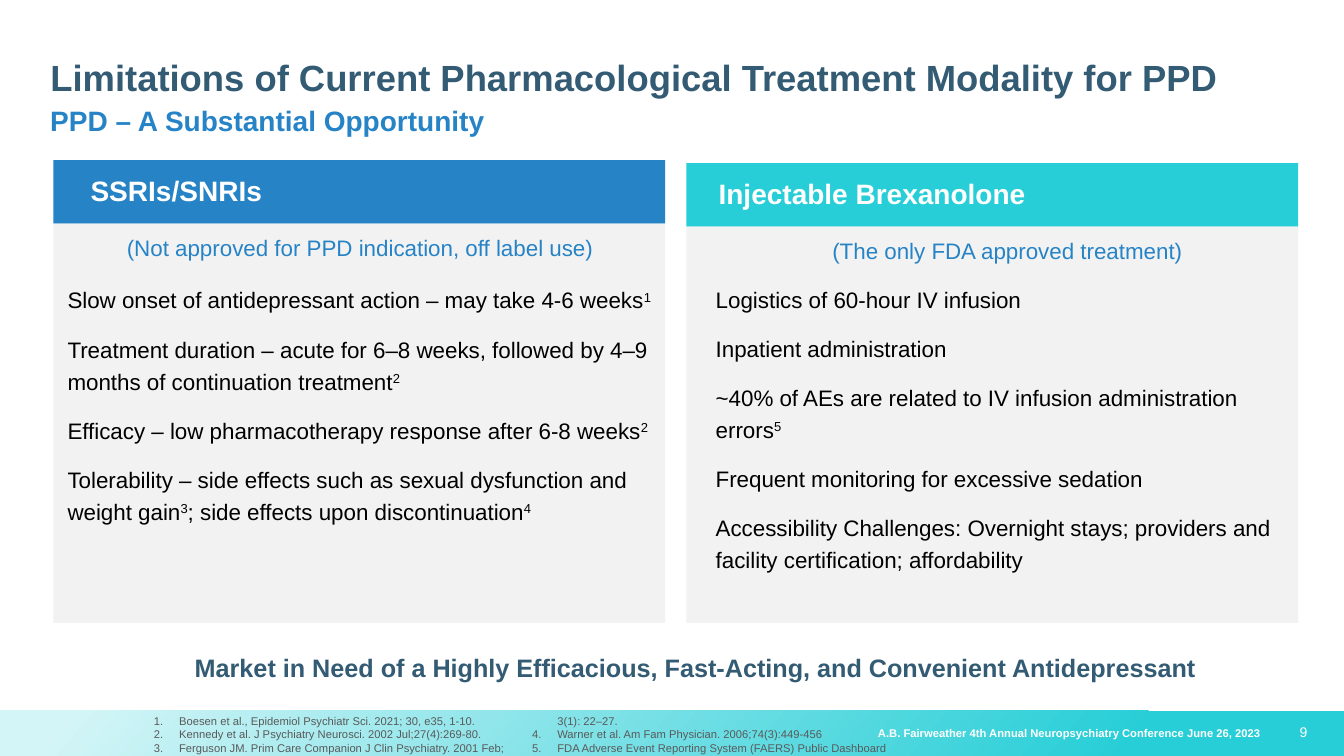
from lxml import etree
from pptx import Presentation
from pptx.dml.color import RGBColor
from pptx.enum.shapes import MSO_SHAPE
from pptx.enum.text import MSO_ANCHOR, MSO_AUTO_SIZE, PP_ALIGN
from pptx.oxml.ns import qn
from pptx.util import Pt

NAVY = RGBColor(0x33, 0x5B, 0x74)
BLUE = RGBColor(0x26, 0x83, 0xC6)
TEAL = RGBColor(0x27, 0xCE, 0xD7)
PALE_TEAL = RGBColor(0xD4, 0xF5, 0xF7)
PANEL_GRAY = RGBColor(0xF2, 0xF2, 0xF2)
TEXT_GRAY = RGBColor(0x59, 0x59, 0x59)
BLACK = RGBColor(0, 0, 0)
WHITE = RGBColor(0xFF, 0xFF, 0xFF)
RECTANGLE = MSO_SHAPE.RECTANGLE
LEFT, CENTER, RIGHT = PP_ALIGN.LEFT, PP_ALIGN.CENTER, PP_ALIGN.RIGHT
TOP, MIDDLE = MSO_ANCHOR.TOP, MSO_ANCHOR.MIDDLE
NO_AUTOFIT = MSO_AUTO_SIZE.NONE

FORMATS = {
    "title": {"size": Pt(26), "bold": True},
    "heading": {"size": Pt(20), "bold": True},
    "message": {"size": Pt(18), "bold": True},
    "body": {"size": Pt(16), "bold": False},
    "number": {"size": Pt(10), "bold": False},
    "event": {"size": Pt(8), "bold": True},
    "reference": {"size": Pt(8), "bold": False},
}

deck = Presentation()
deck.slide_width, deck.slide_height = Pt(960), Pt(540)
page = deck.slides.add_slide(deck.slide_layouts[3])
shapes = page.shapes
title, *lists = page.placeholders


def add_rectangle(left, top, width, height, color=None):
    box = shapes.add_shape(RECTANGLE, Pt(left), Pt(top), Pt(width), Pt(height))
    box.shadow.inherit = False
    box.line.fill.background()
    if color is not None:
        box.fill.solid()
        box.fill.fore_color.rgb = color
    return box


def write(place, lines, style, color, align=LEFT, anchor=TOP, box=None,
          bullet=None, indent=(0, 0), spacing=None, gap=0):
    if box is None:
        box = shapes.add_textbox(*map(Pt, place))
    else:
        box.left, box.top, box.width, box.height = map(Pt, place)
        shapes.element.append(box.element)
    frame = box.text_frame
    frame.word_wrap = True
    frame.auto_size = NO_AUTOFIT
    frame.vertical_anchor = anchor
    for index, line in enumerate(lines):
        para = frame.add_paragraph() if index else frame.paragraphs[0]
        properties = para._p.get_or_add_pPr()
        if bullet:
            properties.set("marL", str(Pt(indent[0])))
            properties.set("indent", str(Pt(indent[1])))
            mark = etree.SubElement(properties, qn("a:" + bullet))
            if bullet == "buAutoNum":
                mark.set("type", "arabicPeriod")
        para.alignment = align
        para.space_before = Pt(gap if index else 0)
        para.space_after = Pt(gap)
        if spacing:
            para.line_spacing = spacing
        for part, text in enumerate(line.split("^")):
            if not text:
                continue
            span = para.add_run()
            span.text = text
            span.font.name = "Arial"
            span.font.color.rgb = color
            for name, value in FORMATS[style].items():
                setattr(span.font, name, value)
            if part % 2:
                span._r.get_or_add_rPr().set("baseline", "30000")
    return box


footer = add_rectangle(0, 507.6, 960, 32.4)
footer.rotation = 180
footer.fill.gradient()
footer.fill.gradient_angle = 320
for stop, (position, color) in zip(footer.fill.gradient_stops, [(0.16, TEAL), (0.95, PALE_TEAL)]):
    stop.position = position
    stop.color.rgb = color

write((903.6, 513.4, 37.4, 19.4), ["9"], "number", WHITE, RIGHT)
event = write((627.1, 519.1, 325, 9.4),
              ["A.B. Fairweather 4th Annual Neuropsychiatry Conference June 26, 2023"],
              "event", WHITE, anchor=MIDDLE)
for side in ("left", "top", "right", "bottom"):
    setattr(event.text_frame, "margin_" + side, 0)
write((94.3, 462.2, 805, 28.8),
      ["Market in Need of a Highly Efficacious, Fast-Acting, and Convenient Antidepressant"],
      "message", NAVY, CENTER)

PANEL_WIDTH, HEADER_HEIGHT, PANEL_BOTTOM = 437, 45.3, 445
panels = [
    {"left": 38.2, "top": 114.5, "color": BLUE,
     "heading": "SSRIs/SNRIs", "heading_left": 57.6,
     "note": "(Not approved for PPD indication, off label use)", "note_left": 83.5,
     "note_align": LEFT, "list_place": (40.3, 197.3, 437, 180.7),
     "points": [
         "Slow onset of antidepressant action – may take 4-6 weeks^1",
         "Treatment duration – acute for 6–8 weeks, followed by 4–9 months of continuation treatment^2",
         "Efficacy – low pharmacotherapy response after 6-8 weeks^2",
         "Tolerability – side effects such as sexual dysfunction and weight gain^3^; "
         "side effects upon discontinuation^4"]},
    {"left": 490.3, "top": 116.6, "color": TEAL,
     "heading": "Injectable Brexanolone", "heading_left": 506.2,
     "note": "(The only FDA approved treatment)", "note_left": 501.1,
     "note_align": CENTER, "list_place": (503.3, 196.6, 419, 216.7),
     "points": [
         "Logistics of 60-hour IV infusion",
         "Inpatient administration",
         "~40% of AEs are related to IV infusion administration errors^5",
         "Frequent monitoring for excessive sedation",
         "Accessibility Challenges: Overnight stays; providers and facility certification; "
         "affordability"]},
]
for panel, list_box in zip(panels, lists):
    left, top = panel["left"], panel["top"]
    body_top = top + HEADER_HEIGHT
    add_rectangle(left, top, PANEL_WIDTH, HEADER_HEIGHT, panel["color"])
    add_rectangle(left, body_top, PANEL_WIDTH, PANEL_BOTTOM - body_top, PANEL_GRAY)
    write((panel["heading_left"], top + 5.7, 387, 31.7), [panel["heading"]], "heading", WHITE)
    write((panel["note_left"], top + 49.4, PANEL_WIDTH, 26.6), [panel["note"]],
          "body", BLUE, panel["note_align"])
    write(panel["list_place"], panel["points"], "body", BLACK, box=list_box,
          bullet="buNone", indent=(0.7, 0), spacing=1.2, gap=6)

references = write((102.2, 512.6, 554.4, 23.8), [
    "Boesen et al., Epidemiol Psychiatr Sci. 2021; 30, e35, 1-10.",
    "Kennedy et al. J Psychiatry Neurosci. 2002 Jul;27(4):269-80.",
    "Ferguson JM. Prim Care Companion J Clin Psychiatry. 2001 Feb; 3(1): 22–27.",
    "Warner et al. Am Fam Physician. 2006;74(3):449-456",
    "FDA Adverse Event Reporting System (FAERS) Public Dashboard",
], "reference", TEXT_GRAY, anchor=MIDDLE, bullet="buAutoNum", indent=(18.7, -18))
references.element.find(".//" + qn("a:bodyPr")).set("numCol", "2")

write((28.8, 36, 899.3, 33.1),
      ["Limitations of Current Pharmacological Treatment Modality for PPD"],
      "title", NAVY, box=title)
write((28.8, 70.6, 899.3, 27.4), ["PPD – A Substantial Opportunity"], "heading", BLUE)

deck.save("out.pptx")
